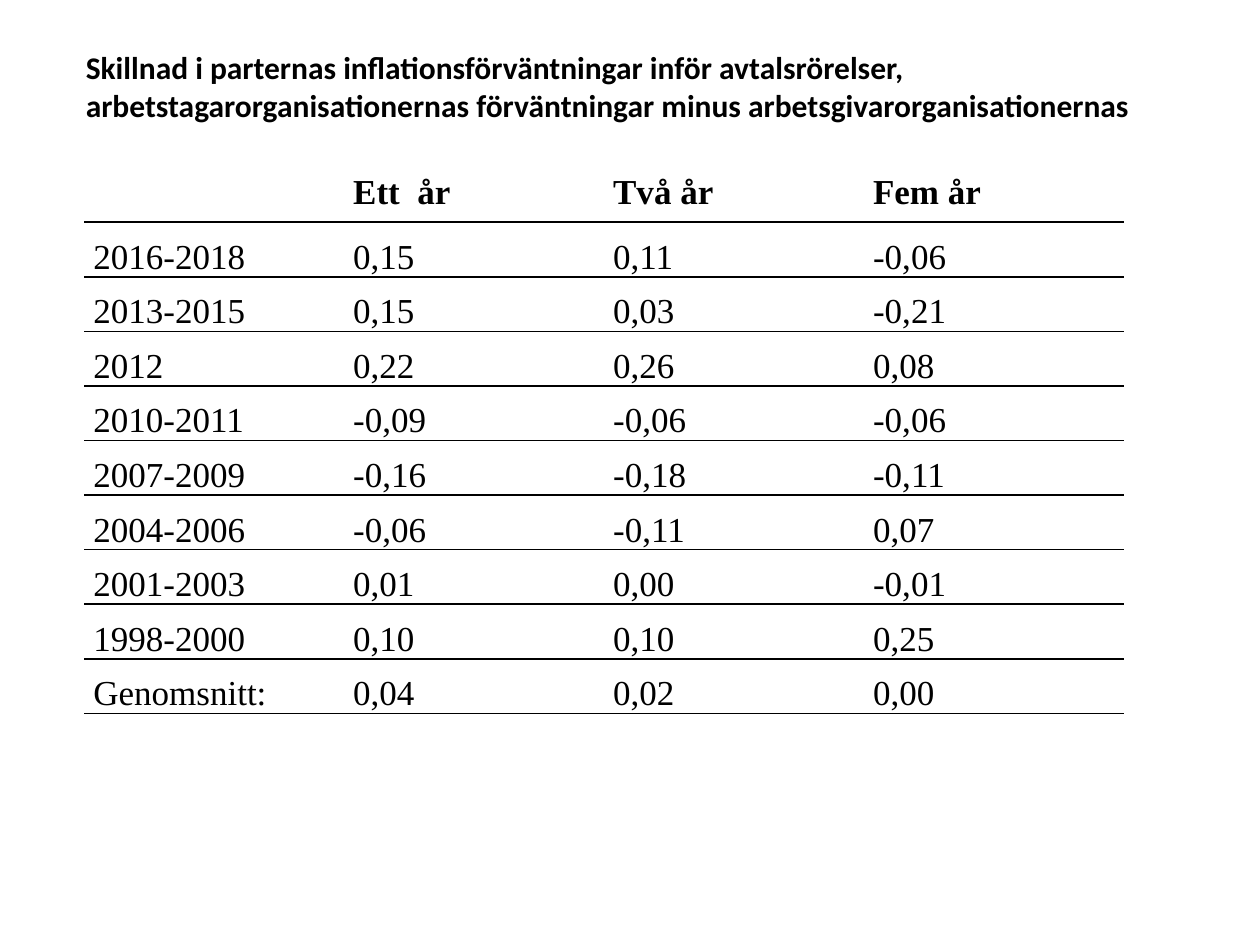
from dataclasses import dataclass

from lxml import etree
from pptx import Presentation
from pptx import util as u
from pptx.dml.color import RGBColor
from pptx.enum import text
from pptx.oxml import ns

TITLE = ("Skillnad i parternas inflationsförväntningar inför avtalsrörelser, "
         "arbetstagarorganisationernas förväntningar minus arbetsgivarorganisationernas")
ROWS = [
    ("", "Ett  år", "Två år", "Fem år"),
    ("2016-2018", "0,15", "0,11", "-0,06"),
    ("2013-2015", "0,15", "0,03", "-0,21"),
    ("2012", "0,22", "0,26", "0,08"),
    ("2010-2011", "-0,09", "-0,06", "-0,06"),
    ("2007-2009", "-0,16", "-0,18", "-0,11"),
    ("2004-2006", "-0,06", "-0,11", "0,07"),
    ("2001-2003", "0,01", "0,00", "-0,01"),
    ("1998-2000", "0,10", "0,10", "0,25"),
    ("Genomsnitt:", "0,04", "0,02", "0,00"),
]


@dataclass(frozen=True)
class Theme:
    """Colours, fonts and sizes of the slide."""
    ink: str = "000000"
    title_font: str = "Calibri"
    table_font: str = "Times New Roman"
    title_size: int = 18
    table_size: int = 20
    rule_width: int = 1


THEME = Theme()


def add_span(para, words, font, size, bold):
    """Add one formatted run to a paragraph."""
    span = para.add_run()
    span.text = words
    span.font.name = font
    span.font.size = u.Pt(size)
    span.font.bold = bold
    span.font.color.rgb = RGBColor.from_string(THEME.ink)


def add_title(page):
    """Place the bold heading above the table."""
    box = page.shapes.add_textbox(u.Cm(1.48), u.Cm(0.84), u.Cm(22.22), u.Cm(2.57))
    box.text_frame.word_wrap = True
    para = box.text_frame.paragraphs[0]
    add_span(para, TITLE, THEME.title_font, THEME.title_size, True)


def set_borders(cell, ruled):
    """Draw the ruled edges of a cell and clear the others."""
    properties = cell._tc.get_or_add_tcPr()
    for edge in ("lnL", "lnR", "lnT", "lnB"):
        line = etree.SubElement(properties, ns.qn(f"a:{edge}"))
        if edge in ruled:
            line.set("w", str(u.Pt(THEME.rule_width)))
            fill = etree.SubElement(line, ns.qn("a:solidFill"))
            etree.SubElement(fill, ns.qn("a:srgbClr"), val=THEME.ink)
        else:
            etree.SubElement(line, ns.qn("a:noFill"))


def fill_cell(cell, words, is_header):
    """Format one table cell and write its text."""
    cell.margin_left = cell.margin_right = u.Cm(0.18)
    cell.margin_top = cell.margin_bottom = 0
    anchors = text.MSO_ANCHOR
    cell.vertical_anchor = anchors.TOP if is_header else anchors.BOTTOM
    set_borders(cell, ("lnB",) if is_header else ("lnT", "lnB"))
    cell.fill.background()
    para = cell.text_frame.paragraphs[0]
    para.line_spacing = 1.15
    if words:
        add_span(para, words, THEME.table_font, THEME.table_size, is_header)


def add_expectations_table(page):
    """Add the table of differences by period and horizon."""
    column_width, row_height = u.Cm(5.24), u.Cm(1.1)
    column_count = len(ROWS[0])
    frame = page.shapes.add_table(len(ROWS), column_count, u.Cm(1.7), u.Cm(3.38),
                                  column_width * column_count, row_height * len(ROWS))
    table = frame.table
    table.horz_banding = False
    for column in table.columns:
        column.width = column_width
    for row_index, (row, values) in enumerate(zip(table.rows, ROWS)):
        row.height = row_height
        for cell, words in zip(row.cells, values):
            fill_cell(cell, words, row_index == 0)


def main():
    """Build and save the slide."""
    deck = Presentation()
    deck.slide_width, deck.slide_height = u.Cm(25.4), u.Cm(19.05)
    page = deck.slides.add_slide(deck.slide_layouts[6])
    add_expectations_table(page)
    add_title(page)
    deck.save("out.pptx")


if __name__ == "__main__":
    main()
